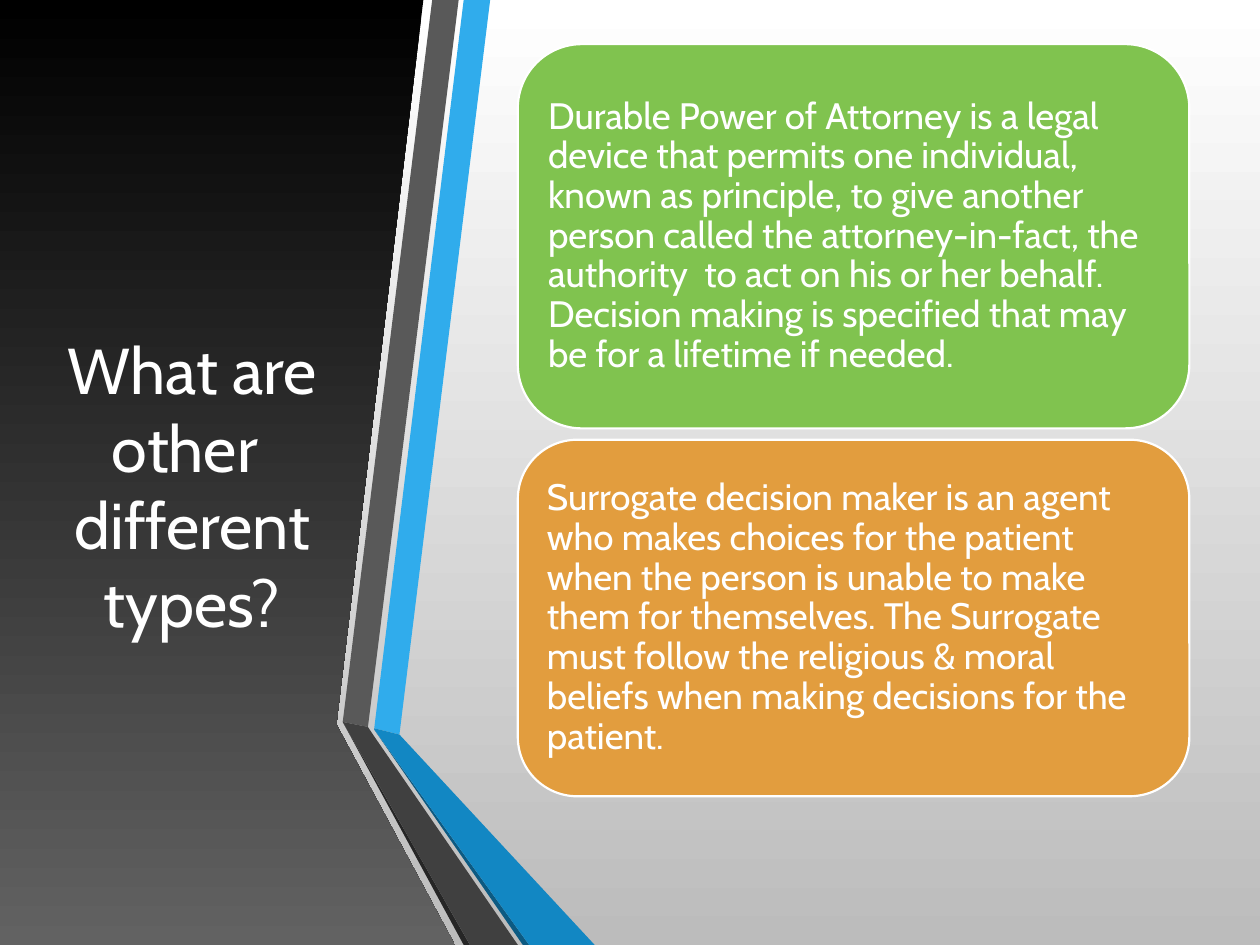
"""Build a slide on other types of health care decision makers."""
from dataclasses import dataclass

from pptx import Presentation
from pptx.dml.color import RGBColor
from pptx.dml.fill import FillFormat
from pptx.enum.shapes import MSO_SHAPE
from pptx.enum.text import MSO_ANCHOR, MSO_AUTO_SIZE, PP_ALIGN
from pptx.shapes.autoshape import Shape
from pptx.slide import Slide
from pptx.text.text import TextFrame
from pptx.util import Inches, Pt

ROUNDED = MSO_SHAPE.ROUNDED_RECTANGLE
MIDDLE = MSO_ANCHOR.MIDDLE
NO_AUTOFIT = MSO_AUTO_SIZE.NONE
CENTER, LEFT = PP_ALIGN.CENTER, PP_ALIGN.LEFT
TITLE_ONLY = 5
DOWNWARD = 270


@dataclass(frozen=True)
class Theme:
    """Colours and type sizes of the slide."""

    font: str = "Cabin"
    title_size: float = 37
    card_size: float = 21
    outline: float = 1.25
    white: str = "FFFFFF"
    silver: str = "BCBCBC"
    black: str = "000000"
    slate: str = "626262"
    blue: str = "30ACEC"
    blue_fold: str = "1287C3"
    blue_edge: str = "0C5A82"
    gray: str = "595959"
    gray_fold: str = "404040"
    gray_edge: str = "262626"
    green: str = "80C34F"
    orange: str = "E29D3E"


@dataclass(frozen=True)
class Ribbon:
    """A filled outline with its corners in inches."""

    color: str
    corners: tuple[tuple[float, float], ...]


@dataclass(frozen=True)
class Card:
    """A rounded card and the box of its text, in inches."""

    color: str
    top: float
    height: float
    text_box: tuple[float, float, float, float]
    text: str


THEME = Theme()
CARD_LEFT, CARD_WIDTH = 4.11, 5.33
TITLE = "What are other  different types?"
PANEL = ((0, 0), (3.36, 0), (2.67, 5.75), (3.61, 7.5), (0, 7.5))
RIBBONS = (
    Ribbon(THEME.blue, ((2.97, 5.78), (3.17, 5.83), (3.89, 0), (3.68, 0))),
    Ribbon(THEME.gray, ((3.64, 0), (3.43, 0), (2.72, 5.73), (2.92, 5.77))),
    Ribbon(THEME.gray_edge, ((2.72, 5.73), (3.68, 7.5), (3.73, 7.5))),
    Ribbon(THEME.blue_edge, ((2.97, 5.79), (4.15, 7.5), (4.2, 7.5))),
    Ribbon(THEME.blue_fold,
           ((2.97, 5.78), (2.97, 5.79), (4.2, 7.5), (4.72, 7.5), (3.17, 5.83))),
    Ribbon(THEME.gray_fold,
           ((2.72, 5.73), (3.73, 7.5), (4.11, 7.5), (2.96, 5.83), (2.92, 5.77))),
)
CARDS = (
    Card(THEME.green, 0.35, 3.05, (4.26, 0.72, 5.03, 2.31),
         "Durable Power of Attorney is a legal device that permits one individual, "
         "known as principle, to give another person called the attorney-in-fact, "
         "the authority  to act on his or her behalf. Decision making is specified "
         "that may be for a lifetime if needed."),
    Card(THEME.orange, 3.49, 2.83, (4.25, 3.66, 5.05, 2.49),
         "Surrogate decision maker is an agent who makes choices for the patient "
         "when the person is unable to make them for themselves. The Surrogate must "
         "follow the religious & moral beliefs when making decisions for the patient."),
)


def fill_solid(fill: FillFormat, color: str) -> None:
    """Fill with one colour."""
    fill.solid()
    fill.fore_color.rgb = RGBColor.from_string(color)


def fill_downward(fill: FillFormat, top: str, bottom: str) -> None:
    """Fill with a gradient from top to bottom."""
    fill.gradient()
    fill.gradient_angle = DOWNWARD
    for stop, color in zip(fill.gradient_stops, (top, bottom)):
        stop.color.rgb = RGBColor.from_string(color)


def draw_outline(slide: Slide, corners: tuple[tuple[float, float], ...]) -> Shape:
    """Draw a closed outline without line or shadow."""
    start, *others = [(Inches(x), Inches(y)) for x, y in corners]
    builder = slide.shapes.build_freeform(*start)
    builder.add_line_segments(others)
    outline = builder.convert_to_shape()
    outline.line.fill.background()
    outline.shadow.inherit = False
    return outline


def write(frame: TextFrame, text: str, size: float, align: PP_ALIGN,
          spacing: float, inset: float) -> None:
    """Write one white paragraph, centred vertically."""
    frame.text = text
    frame.word_wrap = True
    frame.auto_size = NO_AUTOFIT
    frame.vertical_anchor = MIDDLE
    frame.margin_left = frame.margin_right = Inches(inset)
    frame.margin_top = frame.margin_bottom = Inches(inset)
    paragraph = frame.paragraphs[0]
    paragraph.alignment = align
    paragraph.line_spacing = spacing
    paragraph.font.name = THEME.font
    paragraph.font.size = Pt(size)
    paragraph.font.color.rgb = RGBColor.from_string(THEME.white)


def place_title(slide: Slide) -> None:
    """Set the title in front of the dark panel."""
    title = slide.shapes.title
    title.left, title.top = Inches(0.44), Inches(0.75)
    title.width, title.height = Inches(2.17), Inches(5.58)
    write(title.text_frame, TITLE, THEME.title_size, CENTER, 1.0, 0.05)
    title.text_frame.margin_top = Inches(0.67)
    slide.shapes.element.append(title.element)


def draw_card(slide: Slide, card: Card) -> None:
    """Draw a rounded card and its text."""
    plate = slide.shapes.add_shape(ROUNDED, Inches(CARD_LEFT), Inches(card.top),
                                   Inches(CARD_WIDTH), Inches(card.height))
    plate.shadow.inherit = False
    fill_solid(plate.fill, card.color)
    fill_solid(plate.line.fill, THEME.white)
    plate.line.width = Pt(THEME.outline)
    caption = slide.shapes.add_textbox(*map(Inches, card.text_box))
    write(caption.text_frame, card.text, THEME.card_size, LEFT, 0.9, 0.09)


def main() -> None:
    """Build and save the slide."""
    deck = Presentation()
    deck.slide_width, deck.slide_height = Inches(10), Inches(7.5)
    slide = deck.slides.add_slide(deck.slide_layouts[TITLE_ONLY])
    fill_downward(slide.background.fill, THEME.white, THEME.silver)
    fill_downward(draw_outline(slide, PANEL).fill, THEME.black, THEME.slate)
    place_title(slide)
    for ribbon in RIBBONS:
        fill_solid(draw_outline(slide, ribbon.corners).fill, ribbon.color)
    for card in CARDS:
        draw_card(slide, card)
    deck.save("out.pptx")


if __name__ == "__main__":
    main()
